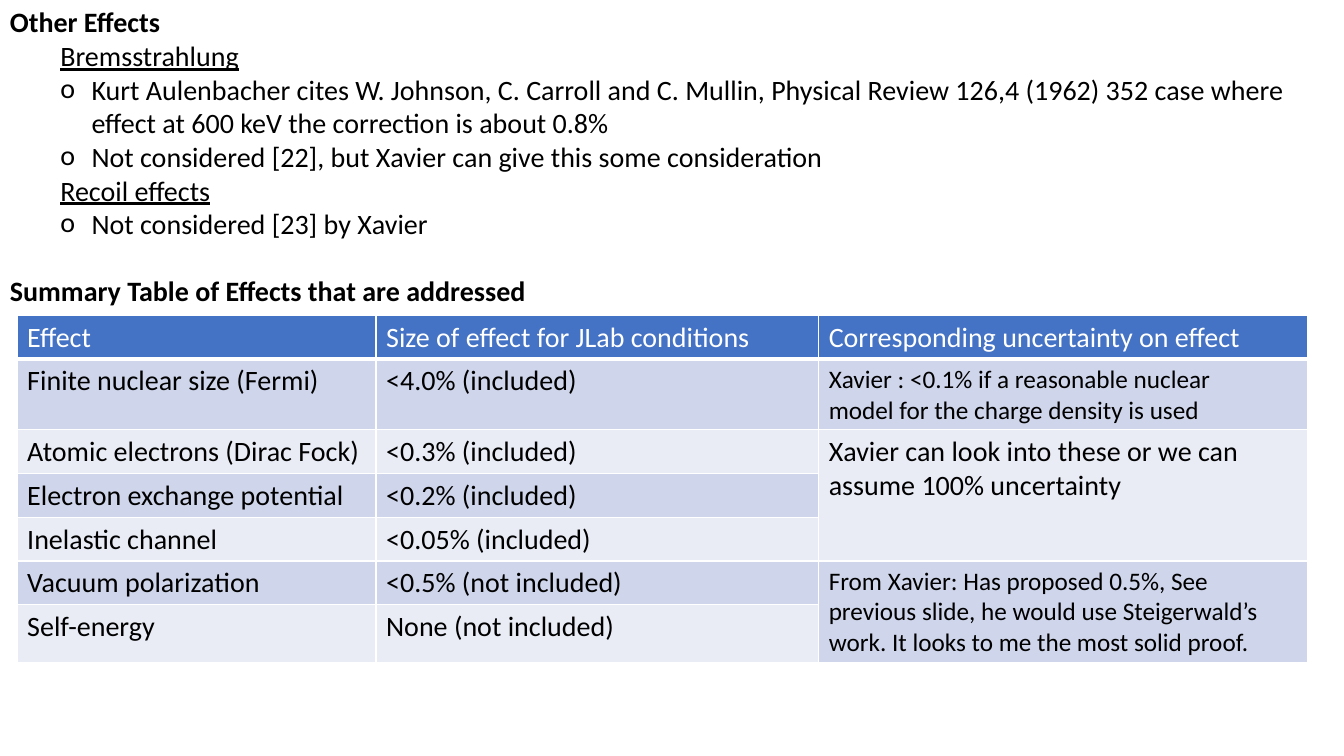
import pptx
import pptx.dml.color
import pptx.oxml
import pptx.oxml.ns
import pptx.util
from dataclasses import dataclass

Inches = pptx.util.Inches
Pt = pptx.util.Pt


@dataclass(frozen=True)
class Theme:
    font: str = "Calibri"
    body: int = 20
    small: int = 18
    text: str = "000000"
    white: str = "FFFFFF"
    header: str = "4472C4"
    bands: tuple = ("CFD5EA", "E9EBF5")


def rgb(value):
    return pptx.dml.color.RGBColor.from_string(value)


def xml(tag, inner="", **attrs):
    """Build one DrawingML element, such as a bullet or a cell border."""
    listed = " ".join(f'{k}="{v}"' for k, v in attrs.items())
    ns = pptx.oxml.ns.nsdecls("a")
    return pptx.oxml.parse_xml(f"<a:{tag} {ns} {listed}>{inner}</a:{tag}>")


class SlideBuilder:
    def __init__(self, s, theme):
        self.s = s
        self.theme = theme

    def style(self, p, text, color, **formats):
        r = p.add_run()
        r.text = text
        formats = {"name": self.theme.font, "size": Pt(self.theme.body), "bold": False, **formats}
        for name, value in formats.items():
            setattr(r.font, name, value)
        r.font.color.rgb = rgb(color)

    def indent(self, p, left, hanging=0.0):
        p.level = 1
        pPr = p._p.get_or_add_pPr()
        pPr.set("marL", str(Inches(left)))
        pPr.set("indent", str(-Inches(hanging)))
        if hanging:
            pPr.append(xml("buFont", typeface=self.theme.font))
            pPr.append(xml("buChar", char="o"))

    def outline(self, left, top, width, height, items):
        """Add a text box of (kind, text) items: heading, topic or point."""
        sp = self.s.shapes.add_textbox(Inches(left), Inches(top), Inches(width), Inches(height))
        tf = sp.text_frame
        tf.word_wrap = True
        for i, (kind, text) in enumerate(items):
            p = tf.add_paragraph() if i else tf.paragraphs[0]
            if kind == "topic":
                self.indent(p, 0.5)
            elif kind == "point":
                self.indent(p, 0.81, 0.31)
            elif i:
                p.space_before = Pt(24)
            self.style(p, text, self.theme.text, bold=kind == "heading", underline=kind == "topic")

    def border(self, cell, is_header):
        tcPr = cell._tc.get_or_add_tcPr()
        fill = f'<a:solidFill><a:srgbClr val="{self.theme.white}"/></a:solidFill>'
        for side in ("lnL", "lnR", "lnT", "lnB"):
            width = 3 if is_header and side == "lnB" else 1
            tcPr.append(xml(side, fill, w=Pt(width)))

    def table(self, left, top, widths, heights, rows, merges, small_cells):
        """Add a banded table; merges maps a (row, column) to the last row it spans."""
        frame = self.s.shapes.add_table(len(rows), len(widths), Inches(left), Inches(top),
                                        Inches(sum(widths)), Inches(sum(heights)))
        table = frame.table
        for column, width in zip(table.columns, widths):
            column.width = Inches(width)
        for row, height in zip(table.rows, heights):
            row.height = Inches(height)
        for (row, col), last in merges.items():
            table.cell(row, col).merge(table.cell(last, col))
        t = self.theme
        for i, texts in enumerate(rows):
            for j in range(len(widths)):
                cell = table.cell(i, j)
                self.border(cell, i == 0)
                cell.fill.solid()
                cell.fill.fore_color.rgb = rgb(t.bands[(i - 1) % 2] if i else t.header)
                if cell.is_spanned:
                    continue
                size = t.small if (i, j) in small_cells else t.body
                tf = cell.text_frame
                for k, line in enumerate(texts[j].split("\n")):
                    p = tf.add_paragraph() if k else tf.paragraphs[0]
                    self.style(p, line, t.text if i else t.white, size=Pt(size))


OUTLINE = [
    ("heading", "Other Effects"),
    ("topic", "Bremsstrahlung"),
    ("point", "Kurt Aulenbacher cites W. Johnson, C. Carroll and C. Mullin, Physical Review 126,4 (1962) 352 "
              "case where effect at 600 keV the correction is about 0.8%"),
    ("point", "Not considered [22], but Xavier can give this some consideration"),
    ("topic", "Recoil effects"),
    ("point", "Not considered [23] by Xavier"),
    ("heading", "Summary Table of Effects that are addressed"),
]

EFFECTS = [
    ("Effect", "Size of effect for JLab conditions", "Corresponding uncertainty on effect"),
    ("Finite nuclear size (Fermi)", "<4.0% (included)",
     "Xavier : <0.1% if a reasonable nuclear\nmodel for the charge density is used"),
    ("Atomic electrons (Dirac Fock)", "<0.3% (included)",
     "Xavier can look into these or we can assume 100% uncertainty"),
    ("Electron exchange potential", "<0.2% (included)"),
    ("Inelastic channel", "<0.05% (included)"),
    ("Vacuum polarization", "<0.5% (not included)",
     "From Xavier: Has proposed 0.5%, See previous slide, he would use Steigerwald’s\n"
     "work. It looks to me the most solid proof."),
    ("Self-energy", "None (not included)"),
]


def main():
    prs = pptx.Presentation()
    prs.slide_width = Inches(13.33)
    prs.slide_height = Inches(7.5)
    blank = prs.slide_layouts[6]
    slide = SlideBuilder(prs.slides.add_slide(blank), Theme())
    slide.outline(0, 0, 13.33, 3.13, OUTLINE)
    slide.table(0.17, 3.13, [3.56, 4.39, 4.85], [0.43, 0.7, *[0.43] * 4, 0.57], EFFECTS,
                merges={(2, 2): 4, (5, 2): 6}, small_cells={(1, 2), (5, 2)})
    prs.save("out.pptx")


if __name__ == "__main__":
    main()
